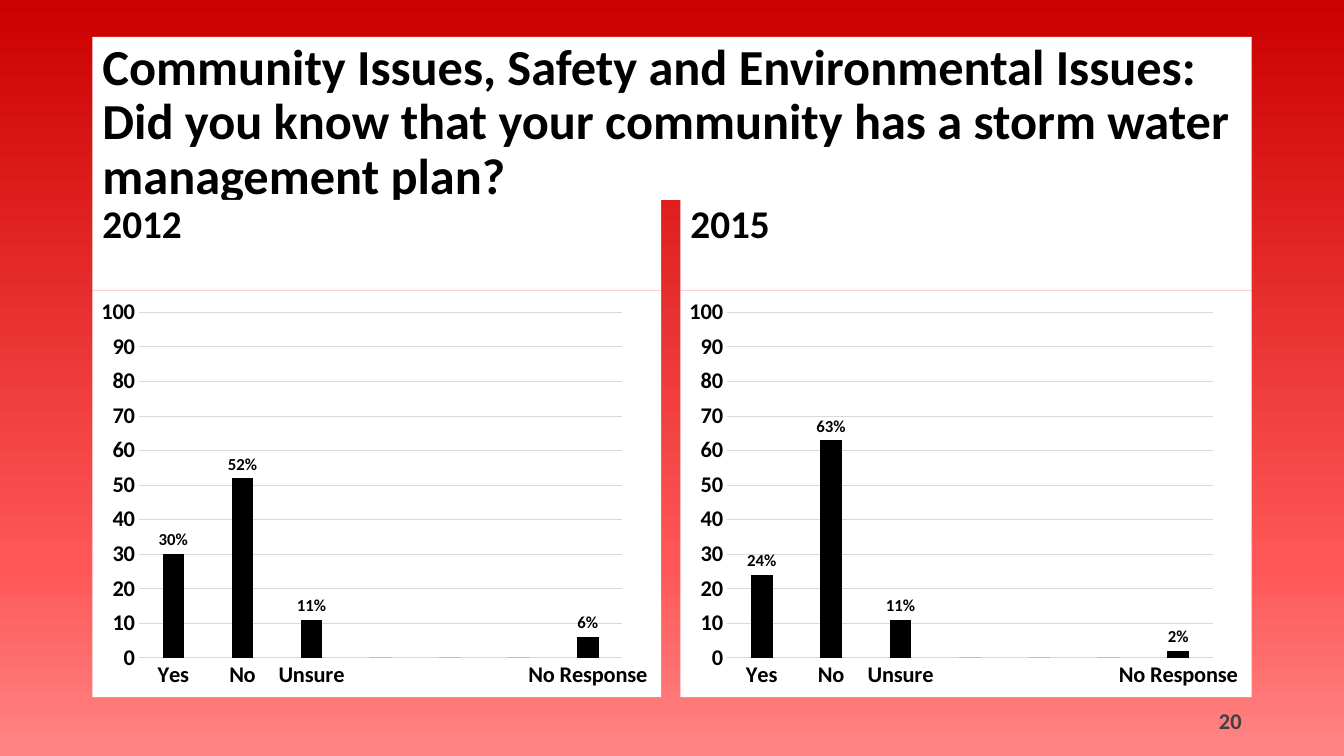
"""Build the storm water survey slide comparing 2012 with 2015."""
from dataclasses import dataclass

from lxml.etree import SubElement
from pptx import Presentation
from pptx.chart.data import CategoryChartData
from pptx.dml.color import RGBColor
from pptx.enum.chart import XL_CHART_TYPE as ChartType
from pptx.enum.chart import XL_LABEL_POSITION as LabelPosition
from pptx.enum.chart import XL_TICK_MARK as TickMark
from pptx.enum.text import MSO_ANCHOR as Anchor
from pptx.enum.text import MSO_AUTO_SIZE as AutoSize
from pptx.enum.text import PP_ALIGN as Align
from pptx.oxml import parse_xml
from pptx.oxml.ns import nsdecls, qn
from pptx.util import Inches, Pt

BLACK = RGBColor(0x00, 0x00, 0x00)
WHITE = RGBColor(0xFF, 0xFF, 0xFF)
GRAY = RGBColor(0x40, 0x40, 0x40)
GRID_GRAY = RGBColor(0xD9, 0xD9, 0xD9)
BACKDROP = {
    0: RGBColor(0xCC, 0x00, 0x00),
    75: RGBColor(0xFF, 0x57, 0x57),
    83: RGBColor(0xFF, 0x66, 0x66),
    100: RGBColor(0xFF, 0x85, 0x85),
}
FONT = "Calibri"
COLUMNS, ROWS = 160, 90
CELL = Inches(1 / 12)
COMPARISON_LAYOUT = 4
ANSWERS = ["Yes", "No", "Unsure", "", "", "", "No Response"]
QUESTION = (
    "Community Issues, Safety and Environmental Issues: "
    "Did you know that your community has a storm water management plan?"
)


@dataclass(frozen=True)
class Area:
    """A rectangle in grid columns and rows."""

    column: float
    row: float
    columns: float
    rows: float

    def emu(self) -> list[int]:
        """Return left, top, width and height in slide units."""
        return [round(n * CELL) for n in (self.column, self.row, self.columns, self.rows)]


@dataclass(frozen=True)
class Survey:
    """One year's results and the columns they fill."""

    year: str
    holder: int
    column: float
    columns: float
    percents: tuple[int, ...]


SURVEYS = [
    Survey("2012", 1, 11, 67.7, (30, 52, 11, 0, 0, 0, 6)),
    Survey("2015", 3, 81, 68, (24, 63, 11, 0, 0, 0, 2)),
]


def style_font(font, size: float, color: RGBColor = BLACK, bold: bool = True) -> None:
    """Set typeface, size, colour and weight."""
    font.name, font.size, font.bold = FONT, Pt(size), bold
    font.color.rgb = color


def write_text(box, text: str, *, area: Area, size: float, color: RGBColor = BLACK,
               fill: RGBColor | None = None, align: Align = Align.LEFT,
               anchor: Anchor = Anchor.TOP, spacing: float = 0.9, before: float = 0) -> None:
    """Place a box and fill it with one formatted paragraph."""
    box.left, box.top, box.width, box.height = area.emu()
    if fill is not None:
        box.fill.solid()
        box.fill.fore_color.rgb = fill
    frame = box.text_frame
    frame.word_wrap, frame.auto_size = True, AutoSize.NONE
    frame.vertical_anchor = anchor
    para = frame.paragraphs[0]
    para.alignment, para.line_spacing, para.space_before = align, spacing, Pt(before)
    span = para.add_run()
    span.text = text
    style_font(span.font, size, color)


def paint_backdrop(page) -> None:
    """Fill the page with the vertical red gradient."""
    fill = page.background.fill
    fill.gradient()
    fill.gradient_angle = 270
    stops = next(page.element.iter(qn("a:gsLst")))
    stops.clear()
    for percent, color in BACKDROP.items():
        stop = SubElement(stops, qn("a:gs"), pos=str(percent * 1000))
        SubElement(stop, qn("a:srgbClr"), val=str(color))


def style_axes(chart) -> None:
    """Format both axes and the gridlines."""
    for axis in (chart.category_axis, chart.value_axis):
        axis.major_tick_mark = axis.minor_tick_mark = TickMark.NONE
        style_font(axis.tick_labels.font, 16)
    chart.category_axis.format.line.color.rgb = GRID_GRAY
    chart.category_axis.format.line.width = Pt(0.75)
    body = next(chart.category_axis._element.iter(qn("a:bodyPr")))
    body.set("rot", "-60000000")
    body.set("vert", "horz")
    scale = chart.value_axis
    scale.minimum_scale, scale.maximum_scale, scale.major_unit = 0, 100, 10
    scale.format.line.fill.background()
    scale.has_major_gridlines = True
    scale.major_gridlines.format.line.color.rgb = GRID_GRAY
    scale.major_gridlines.format.line.width = Pt(0.75)


def add_survey_chart(page, survey: Survey) -> None:
    """Draw one year's answers as columns with percent labels."""
    data = CategoryChartData()
    data.categories = ANSWERS
    data.add_series("Series 1", survey.percents)
    area = Area(survey.column, 34.6, survey.columns, 48.4)
    chart = page.shapes.add_chart(ChartType.COLUMN_CLUSTERED, *area.emu(), data).chart
    chart.has_legend = chart.has_title = False
    style_font(chart.font, 10, bold=False)
    chart.element.find(qn("c:txPr")).addprevious(parse_xml(
        f'<c:spPr {nsdecls("c", "a")}><a:solidFill><a:srgbClr val="{WHITE}"/></a:solidFill>'
        "<a:ln><a:noFill/></a:ln></c:spPr>"
    ))
    style_axes(chart)
    plot = chart.plots[0]
    plot.gap_width, plot.overlap, plot.vary_by_categories = 219, -27, False
    bars = plot.series[0]
    bars.format.fill.solid()
    bars.format.fill.fore_color.rgb = BLACK
    labels = bars.data_labels
    labels.show_value, labels.position = True, LabelPosition.OUTSIDE_END
    labels.number_format, labels.number_format_is_linked = '0"%";;', False
    style_font(labels.font, 12)


def main() -> None:
    """Build and save the deck."""
    deck = Presentation()
    deck.slide_width, deck.slide_height = COLUMNS * CELL, ROWS * CELL
    page = deck.slides.add_slide(deck.slide_layouts[COMPARISON_LAYOUT])
    paint_backdrop(page)
    holders = {item.placeholder_format.idx: item for item in page.placeholders}
    write_text(holders.pop(0), QUESTION, area=Area(11, 4.4, 138, 19.4), size=36, fill=WHITE)
    for survey in SURVEYS:
        write_text(holders.pop(survey.holder), survey.year, size=28, fill=WHITE, before=10,
                   area=Area(survey.column, 23.8, survey.columns, 10.8))
        add_survey_chart(page, survey)
    for spare in holders.values():
        spare.element.getparent().remove(spare.element)
    number = page.shapes.add_textbox(0, 0, CELL, CELL)
    write_text(number, "20", area=Area(113, 83.4, 36, 4.8), size=16, color=GRAY,
               align=Align.RIGHT, anchor=Anchor.MIDDLE, spacing=1.0)
    deck.save("out.pptx")


if __name__ == "__main__":
    main()
